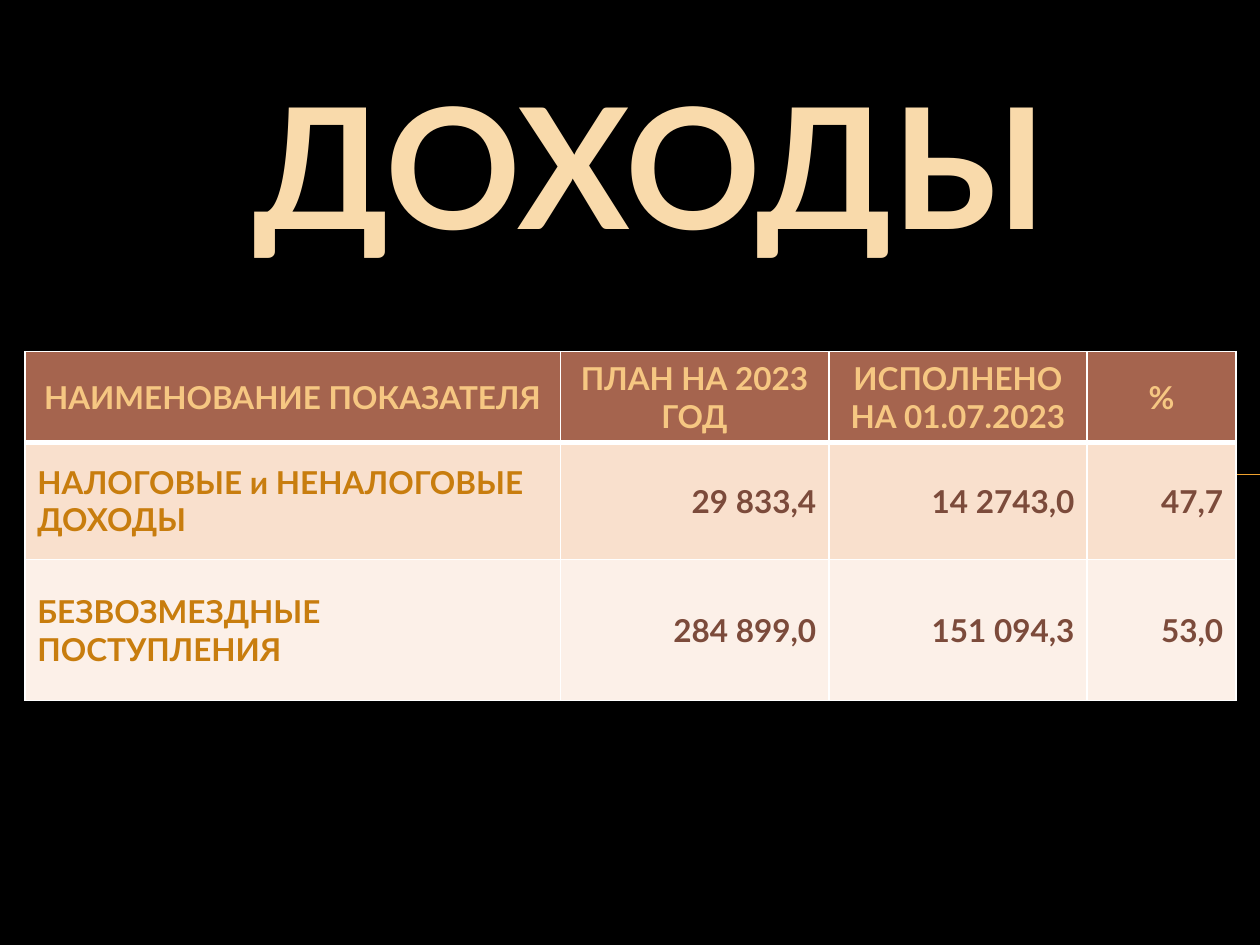
"""Build the budget income slide with its title and table."""
from lxml import etree
from pptx import Presentation
from pptx.dml.color import RGBColor
from pptx.enum.shapes import MSO_CONNECTOR
from pptx.enum.text import MSO_ANCHOR, MSO_AUTO_SIZE, PP_ALIGN
from pptx.oxml.ns import qn
from pptx.util import Pt

LEFT, CENTER, RIGHT = PP_ALIGN.LEFT, PP_ALIGN.CENTER, PP_ALIGN.RIGHT
TOP, MIDDLE = MSO_ANCHOR.TOP, MSO_ANCHOR.MIDDLE
STRAIGHT = MSO_CONNECTOR.STRAIGHT
NO_FIT = MSO_AUTO_SIZE.NONE
FONT = "Lato"
COLORS = {
    "back": "000000",
    "title": "F9DAAB",
    "rule": "F0A22E",
    "border": "FFFFFF",
    "head": "F6C782",
    "label": "C87D0E",
    "value": "7C4B3B",
}
FILLS = ["A5644E", "F9E0CD", "FCF0E8"]
COLS = [306, 153.4, 147.6, 85]
ROWS = [51.8, 67, 80.6]
DATA = [
    ["НАИМЕНОВАНИЕ ПОКАЗАТЕЛЯ", "ПЛАН НА 2023 ГОД", "ИСПОЛНЕНО НА 01.07.2023", "%"],
    ["НАЛОГОВЫЕ и НЕНАЛОГОВЫЕ ДОХОДЫ", "29 833,4", "14 2743,0", "47,7"],
    ["БЕЗВОЗМЕЗДНЫЕ ПОСТУПЛЕНИЯ", "284 899,0", "151 094,3", "53,0"],
]


def rgb(name):
    return RGBColor.from_string(COLORS[name])


def write(frame, text, size=18, color="value", align=LEFT):
    para = frame.paragraphs[0]
    para.alignment = align
    run = para.add_run()
    run.text = text
    font = run.font
    font.name, font.size, font.bold = FONT, Pt(size), True
    font.color.rgb = rgb(color)


def add_rule(slide, left, right, y):
    rule = slide.shapes.add_connector(STRAIGHT, Pt(left), Pt(y), Pt(right), Pt(y))
    rule.line.color.rgb = rgb("rule")
    rule.line.width = Pt(0.75)
    etree.SubElement(rule._element.spPr, qn("a:effectLst"))


def set_title(slide, text):
    title = slide.shapes.title
    title.left, title.top, title.width, title.height = Pt(65.5), Pt(31.7), Pt(612), Pt(107.3)
    frame = title.text_frame
    frame.word_wrap = True
    frame.auto_size = NO_FIT
    frame.vertical_anchor = TOP
    write(frame, text, size=96, color="title", align=CENTER)


def set_edges(cell, top=1, bottom=1):
    props = cell._tc.get_or_add_tcPr()
    for side, width in {"L": 1, "R": 1, "T": top, "B": bottom}.items():
        line = etree.SubElement(props, qn(f"a:ln{side}"), w=str(Pt(width)))
        fill = etree.SubElement(line, qn("a:solidFill"))
        etree.SubElement(fill, qn("a:srgbClr"), val=COLORS["border"])


def style(row, col):
    if row == 0:
        return {"color": "head", "align": CENTER}
    if col == 0:
        return {"color": "label", "align": LEFT}
    return {"color": "value", "align": RIGHT}


def add_grid(slide, left, top):
    frame = slide.shapes.add_table(
        len(ROWS), len(COLS), Pt(left), Pt(top), Pt(sum(COLS)), Pt(sum(ROWS)))
    table = frame.table
    for col, width in zip(table.columns, COLS):
        col.width = Pt(width)
    for r, texts in enumerate(DATA):
        table.rows[r].height = Pt(ROWS[r])
        for c, text in enumerate(texts):
            cell = table.cell(r, c)
            set_edges(cell, top=3 if r == 1 else 1, bottom=3 if r == 0 else 1)
            cell.fill.solid()
            cell.fill.fore_color.rgb = RGBColor.from_string(FILLS[r])
            cell.vertical_anchor = MIDDLE
            write(cell.text_frame, text, **style(r, c))


def main():
    deck = Presentation()
    deck.slide_width, deck.slide_height = Pt(720), Pt(540)
    slide = deck.slides.add_slide(deck.slide_layouts[5])
    slide.background.fill.solid()
    slide.background.fill.fore_color.rgb = rgb("back")
    add_rule(slide, 40.5, 720, 271.3)
    set_title(slide, "ДОХОДЫ")
    add_grid(slide, 14.2, 200.9)
    deck.save("out.pptx")


if __name__ == "__main__":
    main()
